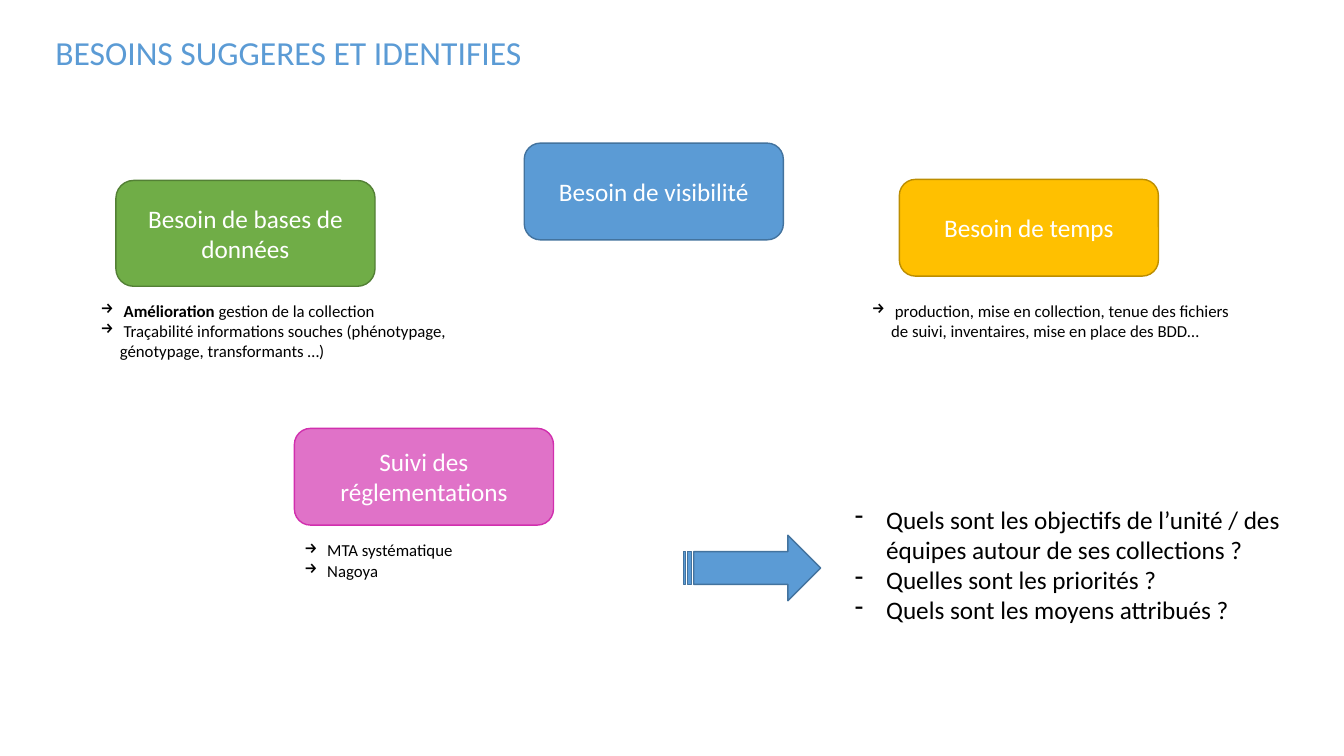
from pptx import Presentation
from pptx.dml.color import RGBColor
from pptx.enum.shapes import MSO_SHAPE
from pptx.enum.text import MSO_ANCHOR, PP_ALIGN
from pptx.oxml.ns import qn
from pptx.util import Inches, Pt
from lxml.etree import SubElement

COLORS = {
    "blue": "5B9BD5", "blue_line": "43739E",
    "green": "70AD47", "green_line": "538035",
    "gold": "FFC000", "gold_line": "BD8E00",
    "pink": "E072C8", "pink_line": "D12FAE",
    "white": "FFFFFF", "black": "000000",
}
FONT = "Calibri"
NEED_W, NEED_H = 2.57, 0.96
NOTE_W = 3.86

NEEDS = [
    ("Besoin de visibilité", "blue", 5.2, 1.42, NEED_H),
    ("Besoin de bases de données", "green", 1.15, 1.79, 1.05),
    ("Besoin de temps", "gold", 8.92, 1.78, NEED_H),
    ("Suivi des réglementations", "pink", 2.92, 4.25, NEED_H),
]
NOTES = [
    (0.9, 2.93, 1.21, [
        [" ", "Amélioration ", "gestion de la collection"],
        [" Traçabilité informations souches (phénotypage, génotypage, transformants …)"],
    ]),
    (8.55, 2.93, 0.81, [
        [" production, mise en collection, tenue des fichiers de suivi, "
         "inventaires, mise en place des BDD…"],
    ]),
    (2.92, 5.31, 0.81, [[" MTA systématique"], [" Nagoya"]]),
]
QUESTIONS = [
    ["Quels sont les objectifs de l’unité / des équipes autour de ses collections ?"],
    ["Quelles sont les priorités ?"],
    ["Quels sont les moyens attribués ?"],
]


def rgb(name):
    """Return the named colour."""
    return RGBColor.from_string(COLORS[name])


def style(p, size, color):
    """Format every run of a paragraph."""
    for r in p.runs:
        r.font.name = FONT
        r.font.size = Pt(size)
        r.font.color.rgb = rgb(color)


def add_box(s, x, y, w, h):
    """Add a wrapping text box and return its text frame."""
    tf = s.shapes.add_textbox(Inches(x), Inches(y), Inches(w), Inches(h)).text_frame
    tf.word_wrap = True
    return tf


def add_filled(s, kind, color, x, y, w, h):
    """Add a preset shape with a fill and its darker outline."""
    sp = s.shapes.add_shape(kind, Inches(x), Inches(y), Inches(w), Inches(h))
    sp.shadow.inherit = False
    sp.fill.solid()
    sp.fill.fore_color.rgb = rgb(color)
    sp.line.color.rgb = rgb(color + "_line")
    sp.line.width = Pt(1)
    return sp


def add_title(s, text, x, y, w, h):
    """Place the slide heading."""
    tf = add_box(s, x, y, w, h)
    tf.text = text
    style(tf.paragraphs[0], 24, "blue")


def add_need(s, text, color, x, y, w, h):
    """Place a rounded card naming one need."""
    tf = add_filled(s, MSO_SHAPE.ROUNDED_RECTANGLE, color, x, y, w, h).text_frame
    tf.word_wrap = True
    tf.vertical_anchor = MSO_ANCHOR.MIDDLE
    tf.text = text
    p = tf.paragraphs[0]
    p.alignment = PP_ALIGN.CENTER
    style(p, 18, "white")


def add_list(s, items, bullet, indent, size, x, y, w, h):
    """Place a bulleted list; the second run of an item is bold."""
    tf = add_box(s, x, y, w, h)
    for i, parts in enumerate(items):
        p = tf.add_paragraph() if i else tf.paragraphs[0]
        for j, part in enumerate(parts):
            r = p.add_run()
            r.text = part
            r.font.bold = j == 1
        style(p, size, "black")
        pPr = p._p.get_or_add_pPr()
        pPr.set("marL", str(Inches(indent)))
        pPr.set("indent", str(-Inches(indent)))
        SubElement(pPr, qn("a:buChar")).set("char", bullet)


def add_needs_slide(prs):
    """Build the slide of needs, notes and questions."""
    s = prs.slides.add_slide(prs.slide_layouts[6])
    add_title(s, "BESOINS SUGGERES ET IDENTIFIES", 0.45, 0.27, 7.82, 0.91)
    for text, color, x, y, h in NEEDS:
        add_need(s, text, color, x, y, NEED_W, h)
    for x, y, h, items in NOTES:
        add_list(s, items, "→", 0.19, 12, x, y, NOTE_W, h)
    add_list(s, QUESTIONS, "-", 0.31, 18, 8.38, 4.95, 4.62, 1.31)
    add_filled(s, MSO_SHAPE.STRIPED_RIGHT_ARROW, "blue", 6.78, 5.31, 1.36, 0.65)


def main():
    """Create and save the presentation."""
    prs = Presentation()
    prs.slide_width, prs.slide_height = Inches(13.33), Inches(7.5)
    add_needs_slide(prs)
    prs.save("out.pptx")


if __name__ == "__main__":
    main()
